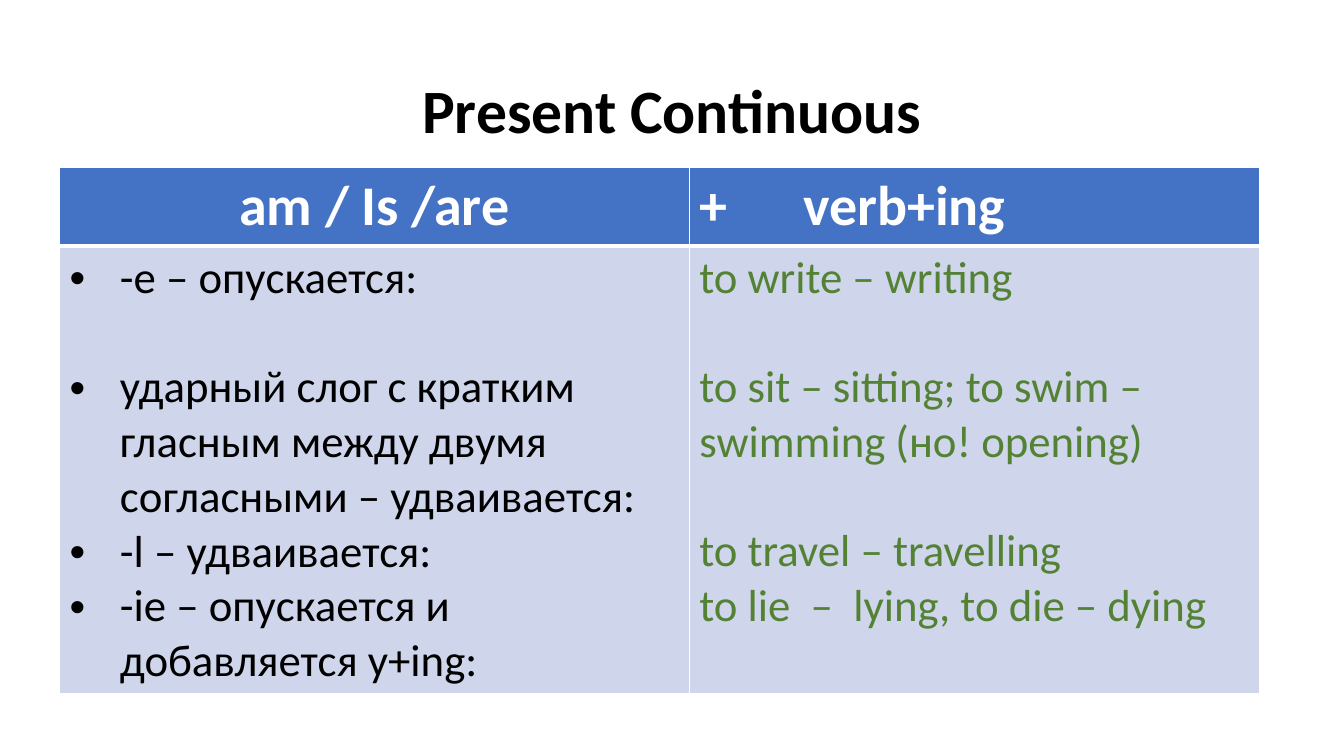
import pptx
import pptx.util
import pptx.dml.color
import pptx.enum.text
import pptx.oxml
import pptx.oxml.ns
from pptx.util import Cm, Pt

RGBColor = pptx.dml.color.RGBColor
ALIGN = pptx.enum.text.PP_ALIGN
BLACK = RGBColor(0x00, 0x00, 0x00)
WHITE = RGBColor(0xFF, 0xFF, 0xFF)
BLUE = RGBColor(0x44, 0x72, 0xC4)
PALE_BLUE = RGBColor(0xCF, 0xD5, 0xEA)
GREEN = RGBColor(0x54, 0x82, 0x35)

FONT = "Calibri"
BLANK_LINE = 39

RULES = [
    ("-e – опускается:", 0),
    ("ударный слог с кратким гласным между двумя согласными – удваивается:", BLANK_LINE),
    ("-l – удваивается:", 0),
    ("-ie – опускается и добавляется y+ing:", 0),
]
EXAMPLES = [
    ("to write – writing", 0),
    ("to sit – sitting; to swim – swimming (но! opening)", BLANK_LINE),
    ("to travel – travelling", BLANK_LINE),
    ("to lie  –  lying, to die – dying", 0),
]


def add_xml(parent, tag, **attrs):
    el = pptx.oxml.parse_xml(f"<a:{tag} {pptx.oxml.ns.nsdecls('a')}/>")
    for name, value in attrs.items():
        el.set(name, str(value))
    parent.append(el)
    return el


def add_run(p, text, size, color, bold=False):
    r = p.add_run()
    r.text = text
    r.font.name = FONT
    r.font.size = Pt(size)
    r.font.bold = bold
    r.font.color.rgb = color


def add_title(s, text):
    sp = s.shapes.add_textbox(Cm(2.33), Cm(1.01), Cm(29.21), Cm(3.68))
    tf = sp.text_frame
    tf.word_wrap = True
    tf.vertical_anchor = pptx.enum.text.MSO_ANCHOR.MIDDLE
    p = tf.paragraphs[0]
    p.alignment = ALIGN.CENTER
    p.line_spacing = 0.9
    add_run(p, text, 44, BLACK, True)


def style_cell(cell, fill, top, bottom):
    cell.fill.solid()
    cell.fill.fore_color.rgb = fill
    tcPr = cell._tc.get_or_add_tcPr()
    widths = {"lnL": 1, "lnR": 1, "lnT": top, "lnB": bottom}
    for i, (side, width) in enumerate(widths.items()):
        ln = add_xml(tcPr, side, w=Pt(width))
        add_xml(add_xml(ln, "solidFill"), "srgbClr", val=WHITE)
        tcPr.insert(i, ln)


def fill_header(cell, text, align, tab=None):
    style_cell(cell, BLUE, 1, 3)
    p = cell.text_frame.paragraphs[0]
    p.alignment = align
    if tab:
        tabs = add_xml(p._p.get_or_add_pPr(), "tabLst")
        add_xml(tabs, "tab", pos=tab, algn="l")
    add_run(p, text, 40, WHITE, True)


def fill_body(cell, lines, color, bulleted=False):
    style_cell(cell, PALE_BLUE, 3, 1)
    tf = cell.text_frame
    for i, (text, gap) in enumerate(lines):
        p = tf.add_paragraph() if i else tf.paragraphs[0]
        p.space_before = Pt(gap)
        if bulleted:
            pPr = p._p.get_or_add_pPr()
            pPr.set("marL", str(Cm(1.27)))
            pPr.set("indent", str(-Cm(1.27)))
            add_xml(pPr, "buFont", typeface="Arial")
            add_xml(pPr, "buChar", char="•")
        add_run(p, text, 32, color)


def add_rules_table(s):
    widths = [Cm(15.87), Cm(14.38)]
    heights = [Cm(1.97), Cm(11.28)]
    table = s.shapes.add_table(2, 2, Cm(1.5), Cm(4.22), sum(widths), sum(heights)).table
    for column, width in zip(table.columns, widths):
        column.width = width
    for row, height in zip(table.rows, heights):
        row.height = height
    fill_header(table.cell(0, 0), "am / Is /are", ALIGN.CENTER)
    fill_header(table.cell(0, 1), "+\tverb+ing", ALIGN.LEFT, Cm(2.62))
    fill_body(table.cell(1, 0), RULES, BLACK, True)
    fill_body(table.cell(1, 1), EXAMPLES, GREEN)


def main():
    prs = pptx.Presentation()
    prs.slide_width = Cm(33.87)
    prs.slide_height = Cm(19.05)
    s = prs.slides.add_slide(prs.slide_layouts[6])
    add_title(s, "Present Continuous")
    add_rules_table(s)
    prs.save("out.pptx")


if __name__ == "__main__":
    main()
